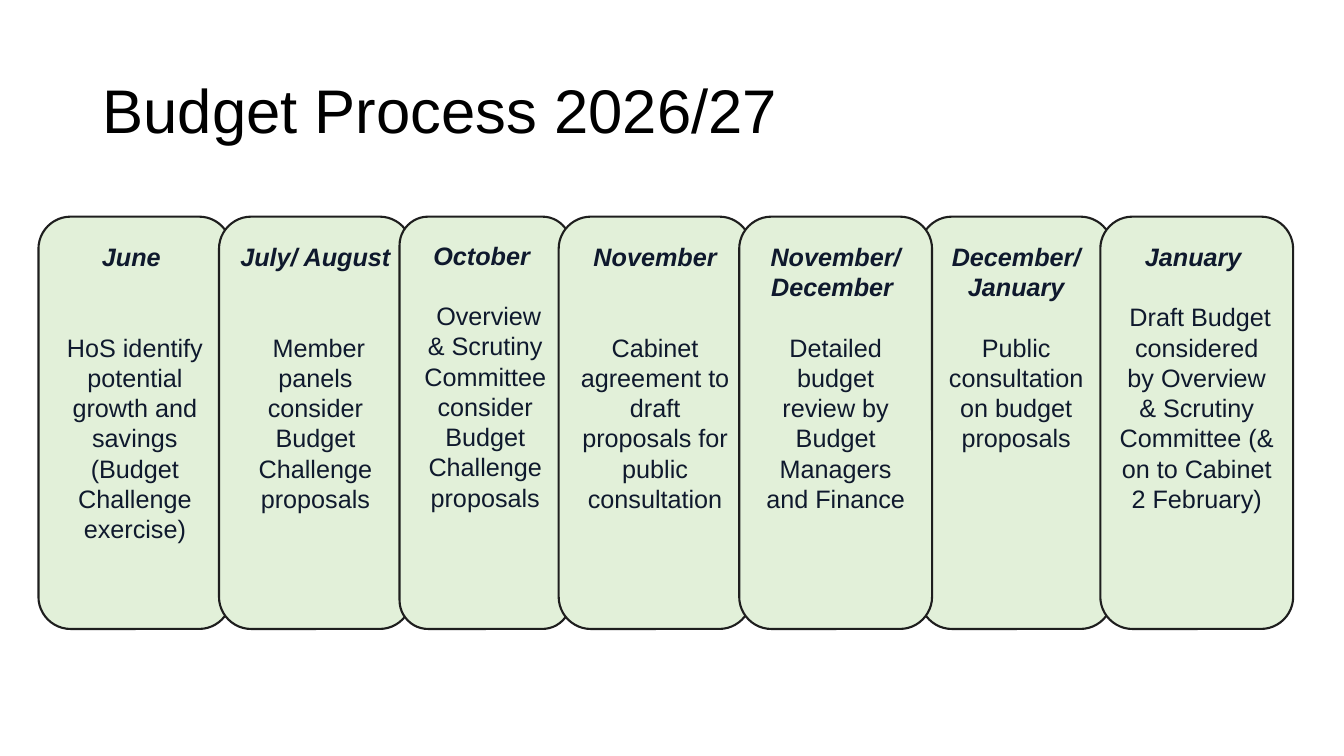
import pptx
import pptx.dml.color
import pptx.enum.shapes
import pptx.enum.text
import pptx.util

Cm = pptx.util.Cm
Pt = pptx.util.Pt
ALIGN = pptx.enum.text.PP_ALIGN
ANCHOR = pptx.enum.text.MSO_ANCHOR


def colour(hex_code):
    return pptx.dml.color.RGBColor.from_string(hex_code)


def apply(target, values):
    for name, value in values.items():
        setattr(target, name, value)


class BudgetSlide:
    ink = "0F192D"
    outline = "1E1E1E"
    card_fill = "E2F0D9"
    line_height = 21.6
    heading_font = {"name": "Arial", "size": Pt(18), "bold": True, "italic": True}
    body_font = {"name": "Arial", "size": Pt(18), "bold": False, "italic": False}
    title_font = {"name": "Arial", "size": Pt(44)}

    def __init__(self, deck):
        self.slide = deck.slides.add_slide(deck.slide_layouts[6])

    def add_wording(self, paragraph, wording, font, hex_code, layout):
        run = paragraph.add_run()
        run.text = wording
        apply(run.font, font)
        run.font.color.rgb = colour(hex_code)
        apply(paragraph, layout)

    def title(self, wording, left, top, width, height):
        heading = self.slide.shapes.add_textbox(Cm(left), Cm(top), Cm(width), Cm(height))
        frame = heading.text_frame
        apply(frame, {"word_wrap": True, "vertical_anchor": ANCHOR.MIDDLE})
        self.add_wording(frame.paragraphs[0], wording, self.title_font, "000000",
                         {"line_spacing": 0.9})

    def card(self, left, top, width, height, month, gap_lines, activity):
        card = self.slide.shapes.add_shape(
            pptx.enum.shapes.MSO_SHAPE.ROUNDED_RECTANGLE,
            Cm(left), Cm(top), Cm(width), Cm(height))
        card.shadow.inherit = False
        card.fill.solid()
        card.fill.fore_color.rgb = colour(self.card_fill)
        card.line.color.rgb = colour(self.outline)
        card.line.width = Pt(1.5)
        frame = card.text_frame
        apply(frame, {"word_wrap": True, "vertical_anchor": ANCHOR.TOP,
                      "margin_top": Cm(0.38)})
        layout = {"alignment": ALIGN.CENTER, "line_spacing": Pt(self.line_height)}
        self.add_wording(frame.paragraphs[0], month, self.heading_font, self.ink, layout)
        gap = {"space_before": Pt(gap_lines * self.line_height)}
        self.add_wording(frame.add_paragraph(), activity, self.body_font, self.ink,
                         layout | gap)


def main():
    deck = pptx.Presentation()
    apply(deck, {"slide_width": Cm(33.87), "slide_height": Cm(19.05)})
    budget = BudgetSlide(deck)
    budget.title("Budget Process 2026/27", 2.34, 1.02, 29.21, 3.68)

    wide, narrow, overlap = 4.86, 4.32, 0.31
    stages = [
        (wide, "June ", 2,
         "HoS identify potential growth and savings (Budget Challenge exercise)"),
        (wide, "July/ August", 2,
         " Member panels consider Budget Challenge proposals"),
        (narrow, "October ", 1,
         " Overview & Scrutiny Committee consider Budget Challenge proposals"),
        (wide, "November", 2,
         "Cabinet agreement to draft proposals for public consultation"),
        (wide, "November/ December ", 1,
         "Detailed budget review by Budget Managers and Finance"),
        (wide, "December/ January", 1,
         "Public consultation on budget proposals"),
        (wide, "January ", 1,
         " Draft Budget considered by Overview & Scrutiny Committee"
         " (& on to Cabinet 2 February)"),
    ]
    left = 0.97
    cards = []
    for width, month, gap_lines, activity in stages:
        cards.append((left, 5.46, width, 10.39, month, gap_lines, activity))
        left += width - overlap
    for card in cards[5:] + cards[:5]:
        budget.card(*card)

    deck.save("out.pptx")


if __name__ == "__main__":
    main()
